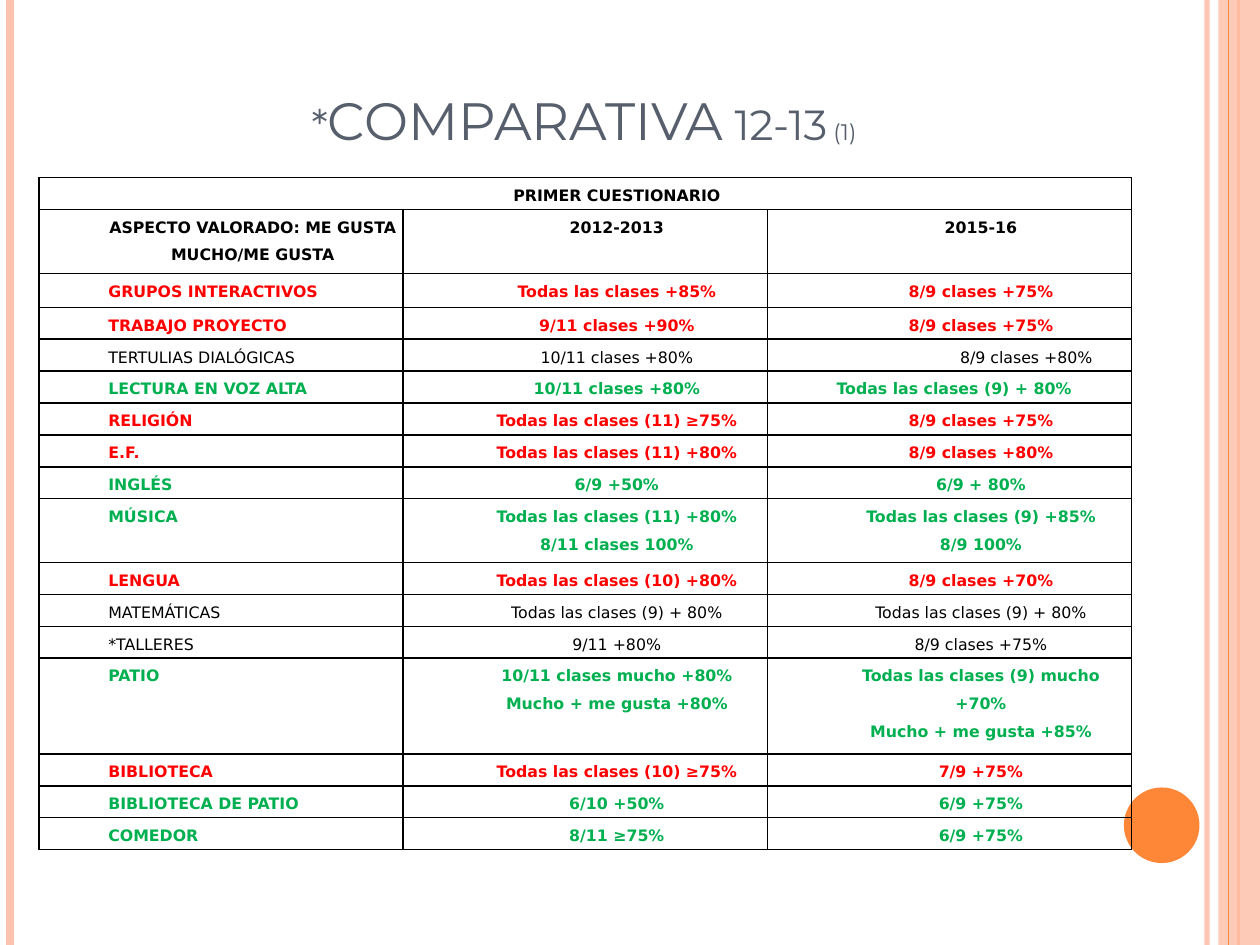
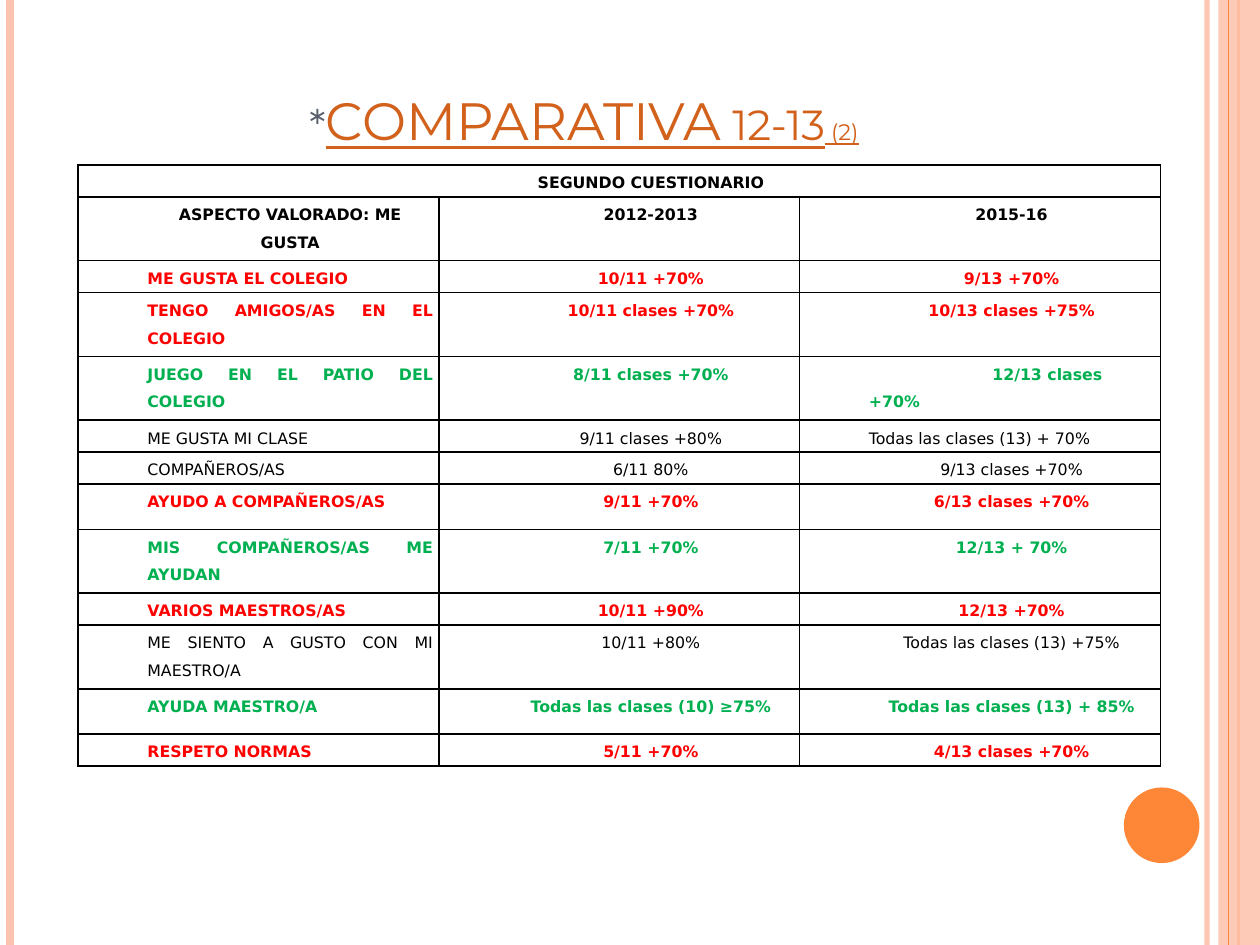
from collections import namedtuple

from lxml.etree import SubElement
from pptx import Presentation
from pptx.dml.color import RGBColor
from pptx.enum.shapes import MSO_CONNECTOR as Connector, MSO_SHAPE as Shape
from pptx.enum.text import MSO_ANCHOR as Anchor, MSO_AUTO_SIZE as AutoSize, PP_ALIGN as Align
from pptx.oxml.ns import qn
from pptx.util import Inches, Pt

PEACH = RGBColor(0xFE, 0xC3, 0xAE)
ORANGE = RGBColor(0xFE, 0x86, 0x37)
RUST = RGBColor(0xD2, 0x61, 0x1C)
SLATE = RGBColor(0x57, 0x5F, 0x6D)
BLACK = RGBColor(0, 0, 0)
RED = RGBColor(0xFF, 0, 0)
GREEN = RGBColor(0, 0xB0, 0x50)

TITLE_FONT, TABLE_FONT = "Montserrat", "DejaVu Sans"
TITLE_BOX = [Inches(n) for n in (0.55, 0, 8.17, 1.25)]
ROW_LINE = Inches(0.76) // 3
TALL_ROW = Inches(0.36)
INDENT, STEP = Inches(0.5), Inches(0.98)

Tone = namedtuple("Tone", "color bold")
HEAD, WORSE, BETTER, SAME = Tone(BLACK, True), Tone(RED, True), Tone(GREEN, True), Tone(BLACK, False)
Aspect = namedtuple("Aspect", "tone label before now height now_align now_step",
                    defaults=(ROW_LINE, Align.CENTER, 0))
LEFT_STEP = {"now_align": Align.LEFT, "now_step": STEP}
JUSTIFIED = {"now_align": Align.JUSTIFY}
TWO_LINES = {"height": 2 * ROW_LINE}

FIRST_SURVEY = [
    Aspect(HEAD, "ASPECTO VALORADO: ME GUSTA MUCHO/ME GUSTA", "2012-2013", "2015-16", **TWO_LINES),
    Aspect(WORSE, "GRUPOS INTERACTIVOS", "Todas las clases +85%", "8/9 clases +75%", Inches(0.27)),
    Aspect(WORSE, "TRABAJO PROYECTO", "9/11 clases +90%", "8/9 clases +75%"),
    Aspect(SAME, "TERTULIAS DIALÓGICAS", "10/11 clases +80%", "8/9 clases +80%", **LEFT_STEP),
    Aspect(BETTER, "LECTURA EN VOZ ALTA", "10/11 clases +80%", "Todas las clases (9) + 80%", **JUSTIFIED),
    Aspect(WORSE, "RELIGIÓN", "Todas las clases (11) ≥75%", "8/9 clases +75%"),
    Aspect(WORSE, "E.F.", "Todas las clases (11) +80%", "8/9 clases +80%"),
    Aspect(BETTER, "INGLÉS", "6/9 +50%", "6/9 + 80%"),
    Aspect(BETTER, "MÚSICA", "Todas las clases (11) +80%\n8/11 clases 100%",
           "Todas las clases (9) +85%\n8/9 100%", **TWO_LINES),
    Aspect(WORSE, "LENGUA", "Todas las clases (10) +80%", "8/9 clases +70%"),
    Aspect(SAME, "MATEMÁTICAS", "Todas las clases (9) + 80%", "Todas las clases (9) + 80%"),
    Aspect(SAME, "*TALLERES", "9/11 +80%", "8/9 clases +75%"),
    Aspect(BETTER, "PATIO", "10/11 clases mucho +80%\nMucho + me gusta +80%",
           "Todas las clases (9) mucho +70%\nMucho + me gusta +85%", 3 * ROW_LINE),
    Aspect(WORSE, "BIBLIOTECA", "Todas las clases (10) ≥75%", "7/9 +75%"),
    Aspect(BETTER, "BIBLIOTECA DE PATIO", "6/10 +50%", "6/9 +75%"),
    Aspect(BETTER, "COMEDOR", "8/11 ≥75%", "6/9 +75%"),
]

SECOND_SURVEY = [
    Aspect(HEAD, "ASPECTO VALORADO: ME GUSTA", "2012-2013", "2015-16", **TWO_LINES),
    Aspect(WORSE, "ME GUSTA EL COLEGIO", "10/11 +70%", "9/13 +70%"),
    Aspect(WORSE, "TENGO AMIGOS/AS EN EL COLEGIO", "10/11 clases +70%", "10/13 clases +75%", **TWO_LINES),
    Aspect(BETTER, "JUEGO EN EL PATIO DEL COLEGIO", "8/11 clases +70%", "12/13 clases +70%",
           **TWO_LINES, **LEFT_STEP),
    Aspect(SAME, "ME GUSTA MI CLASE", "9/11 clases +80%", "Todas las clases (13) + 70%", **JUSTIFIED),
    Aspect(SAME, "COMPAÑEROS/AS", "6/11 80%", "9/13 clases +70%"),
    Aspect(WORSE, "AYUDO A COMPAÑEROS/AS", "9/11 +70%", "6/13 clases +70%", TALL_ROW),
    Aspect(BETTER, "MIS COMPAÑEROS/AS ME AYUDAN", "7/11 +70%", "12/13 + 70%", **TWO_LINES),
    Aspect(WORSE, "VARIOS MAESTROS/AS", "10/11 +90%", "12/13 +70%"),
    Aspect(SAME, "ME SIENTO A GUSTO CON MI MAESTRO/A", "10/11 +80%", "Todas las clases (13) +75%", **TWO_LINES),
    Aspect(BETTER, "AYUDA MAESTRO/A", "Todas las clases (10) ≥75%", "Todas las clases (13) + 85%", TALL_ROW),
    Aspect(WORSE, "RESPETO NORMAS", "5/11 +70%", "4/13 clases +70%"),
]


def apply_format(target, values):
    """Set each named attribute on the target."""
    for name, value in values.items():
        setattr(target, name, value)


def set_alpha(fill, percent):
    """Make a solid fill partly transparent."""
    color = fill._xPr.find(qn("a:solidFill"))[0]
    SubElement(color, qn("a:alpha"), val=str(percent * 1000))


def add_stripe(slide, x, color, width, alpha=100):
    """Draw a vertical line over the full slide height."""
    stripe = slide.shapes.add_connector(Connector.STRAIGHT, Inches(x), 0, Inches(x), Inches(7.5))
    stripe.line.color.rgb = color
    stripe.line.width = Pt(width)
    SubElement(stripe._element.spPr, qn("a:effectLst"))
    if alpha < 100:
        set_alpha(stripe.line.fill, alpha)


def add_plain_shape(slide, kind, box, color):
    """Draw a borderless shape with a solid fill."""
    shape = slide.shapes.add_shape(kind, *[Inches(n) for n in box])
    shape.shadow.inherit = False
    shape.fill.solid()
    shape.fill.fore_color.rgb = color
    shape.line.fill.background()
    return shape


def add_decor(slide):
    """Draw the side stripes, the right band and the disc."""
    add_stripe(slide, 9.58, PEACH, 3, 93)
    add_stripe(slide, 0.08, PEACH, 4.5)
    add_stripe(slide, 9.83, ORANGE, 1.5)
    band = add_plain_shape(slide, Shape.RECTANGLE, (9.67, 0, 0.33, 7.5), PEACH)
    set_alpha(band.fill, 87)
    add_stripe(slide, 9.75, ORANGE, 0.75)
    add_plain_shape(slide, Shape.OVAL, (8.92, 6.25, 0.6, 0.6), ORANGE)


def fill_title(slide, number, color, underline):
    """Place the title and write its three runs."""
    title = slide.shapes.title
    apply_format(title, dict(zip(("left", "top", "width", "height"), TITLE_BOX)))
    apply_format(title.text_frame, {"vertical_anchor": Anchor.BOTTOM, "word_wrap": True,
                                    "auto_size": AutoSize.NONE})
    heading = title.text_frame.paragraphs[0]
    heading.alignment = Align.CENTER
    pieces = (("*", 30, SLATE, False), ("COMPARATIVA 12-13", 30, color, underline),
              (f" ({number})", 16, color, underline))
    for text, size, piece_color, underlined in pieces:
        run = heading.add_run()
        run.text = text
        apply_format(run.font, {"name": TITLE_FONT, "size": Pt(size), "underline": underlined})
        run.font.color.rgb = piece_color
        run.font._element.set("cap", "small")


def frame_cell(cell):
    """Give a cell black borders, small margins and no fill."""
    apply_format(cell, {"margin_left": Inches(0.05), "margin_right": Inches(0.05),
                        "margin_top": 0, "margin_bottom": 0})
    properties = cell._tc.get_or_add_tcPr()
    for side in ("lnL", "lnR", "lnT", "lnB"):
        border = SubElement(properties, qn(f"a:{side}"), w=str(Pt(1)))
        SubElement(SubElement(border, qn("a:solidFill")), qn("a:srgbClr"), val=str(BLACK))
    cell.fill.background()


def write_cell(cell, text, tone, align, step=0):
    """Write the indented paragraphs of one cell."""
    cell.text_frame.text = text
    for paragraph in cell.text_frame.paragraphs:
        apply_format(paragraph, {"alignment": align, "line_spacing": Pt(15.8)})
        properties = paragraph._p.get_or_add_pPr()
        properties.set("marL", str(INDENT))
        properties.set("indent", str(step))
        font = paragraph.runs[0].font
        apply_format(font, {"name": TABLE_FONT, "size": Pt(9), "bold": tone.bold})
        font.color.rgb = tone.color


def add_survey(slide, box, heading, aspects):
    """Build the table of one questionnaire in the given box."""
    left, top, width, height = [Inches(n) for n in box]
    table = slide.shapes.add_table(len(aspects) + 1, 3, left, top, width, height).table
    apply_format(table, {"first_row": False, "horz_banding": False})
    for column in table.columns:
        column.width = width // 3
    for cell in table.iter_cells():
        frame_cell(cell)
    table.rows[0].height = ROW_LINE
    table.cell(0, 0).merge(table.cell(0, 2))
    write_cell(table.cell(0, 0), heading, HEAD, Align.CENTER)
    for row, aspect in zip(list(table.rows)[1:], aspects):
        row.height = aspect.height
        label, before, now = row.cells
        label_align = Align.CENTER if aspect.tone is HEAD else Align.JUSTIFY
        write_cell(label, aspect.label, aspect.tone, label_align)
        write_cell(before, aspect.before, aspect.tone, Align.CENTER)
        write_cell(now, aspect.now, aspect.tone, aspect.now_align, aspect.now_step)


def add_comparison(deck, number, color, underline, box, heading, aspects):
    """Add one comparison slide with its title and table."""
    slide = deck.slides.add_slide(deck.slide_layouts[5])
    add_decor(slide)
    fill_title(slide, number, color, underline)
    add_survey(slide, box, heading, aspects)


def main():
    """Build and save the two slides."""
    deck = Presentation()
    deck.slide_width, deck.slide_height = Inches(10), Inches(7.5)
    add_comparison(deck, 1, SLATE, False, (0.31, 1.41, 8.67, 5.34), "PRIMER CUESTIONARIO", FIRST_SURVEY)
    add_comparison(deck, 2, RUST, True, (0.62, 1.31, 8.59, 4.79), "SEGUNDO CUESTIONARIO", SECOND_SURVEY)
    deck.save("out.pptx")


if __name__ == "__main__":
    main()
